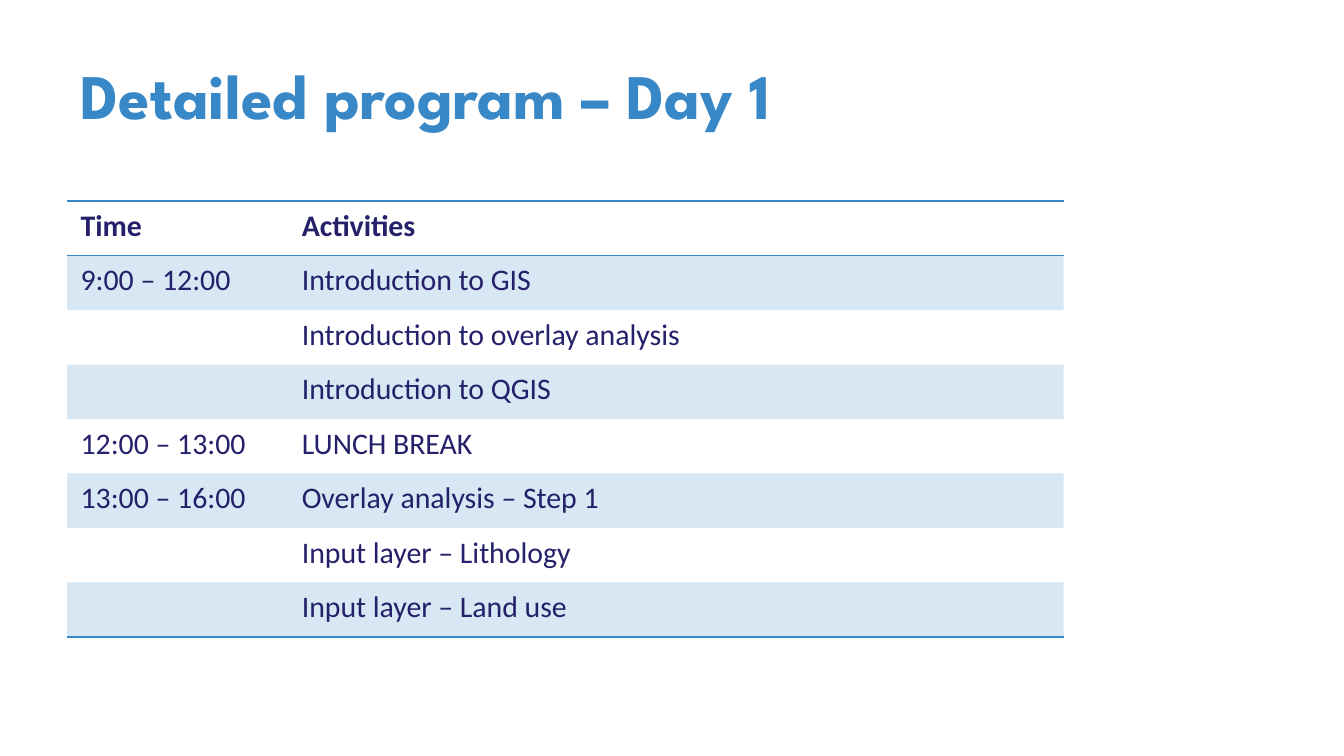
from lxml.etree import SubElement
from pptx import Presentation
from pptx.dml.color import RGBColor
from pptx.enum.text import MSO_ANCHOR, PP_ALIGN
from pptx.oxml.ns import qn
from pptx.util import Cm, Pt

BLUE = "3887C7"
NAVY = "242069"
NO_STYLE = "{2D5ABB26-0587-4C30-8999-92F81FD0307C}"

PROGRAM = [
    ("Time", "Activities"),
    ("9:00 – 12:00", "Introduction to GIS"),
    ("", "Introduction to overlay analysis"),
    ("", "Introduction to QGIS"),
    ("12:00 – 13:00", "LUNCH BREAK"),
    ("13:00 – 16:00", "Overlay analysis – Step 1"),
    ("", "Input layer – Lithology"),
    ("", "Input layer – Land use"),
]


def color(hex_string):
    return RGBColor.from_string(hex_string)


def write_text(text_frame, text, *, font, size, hex_color, bold=False,
               anchor=MSO_ANCHOR.TOP):
    text_frame.word_wrap = True
    text_frame.vertical_anchor = anchor
    paragraph = text_frame.paragraphs[0]
    paragraph.alignment = PP_ALIGN.LEFT
    paragraph.font.size = Pt(size)
    if text:
        run = paragraph.add_run()
        run.text = text
        run.font.name = font
        run.font.size = Pt(size)
        run.font.bold = bold
        run.font.color.rgb = color(hex_color)


def add_border(cell, side, hex_color, points):
    line = SubElement(cell._tc.get_or_add_tcPr(), qn(f"a:ln{side}"),
                      w=str(Pt(points)))
    fill = SubElement(line, qn("a:solidFill"))
    SubElement(fill, qn("a:srgbClr"), val=hex_color)


def fill_cell(cell, hex_color, opacity):
    cell.fill.solid()
    cell.fill.fore_color.rgb = color(hex_color)
    rgb = cell._tc.tcPr.find(f"{qn('a:solidFill')}/{qn('a:srgbClr')}")
    SubElement(rgb, qn("a:alpha"), val=str(opacity * 1000))


def place_title(slide, text, left, top, width, height):
    title = slide.shapes.title
    title.left, title.top = Cm(left), Cm(top)
    title.width, title.height = Cm(width), Cm(height)
    write_text(title.text_frame, text, font="League Spartan", size=34,
               hex_color=BLUE, bold=True, anchor=MSO_ANCHOR.MIDDLE)


def place_program(slide, rows, left, top, width, height, time_width):
    frame = slide.shapes.add_table(len(rows), 2, Cm(left), Cm(top),
                                   Cm(width), Cm(height))
    table = frame.table
    table.horz_banding = False
    table._tbl.tblPr.find(qn("a:tableStyleId")).text = NO_STYLE
    table.columns[0].width = Cm(time_width)
    table.columns[1].width = Cm(width - time_width)

    for row_index, row in enumerate(rows):
        is_header = row_index == 0
        is_last = row_index == len(rows) - 1
        for column_index, text in enumerate(row):
            cell = table.cell(row_index, column_index)
            # Rules above and below the header, and below the last row
            if is_header:
                add_border(cell, "T", BLUE, 1)
            if is_header or is_last:
                add_border(cell, "B", BLUE, 1)
            # Every other row is tinted
            if row_index % 2:
                fill_cell(cell, BLUE, opacity=20)
            else:
                cell.fill.background()
            cell.vertical_anchor = MSO_ANCHOR.TOP
            write_text(cell.text_frame, text, font="Calibri", size=16,
                       hex_color=NAVY, bold=is_header)


def main():
    presentation = Presentation()
    presentation.slide_width, presentation.slide_height = Cm(25.4), Cm(14.29)
    slide = presentation.slides.add_slide(presentation.slide_layouts[5])
    place_title(slide, "Detailed program – Day 1", 1.27, 0.58, 18.83, 2.39)
    place_program(slide, PROGRAM, 1.27, 3.8, 18.83, 8.24, time_width=4.18)
    presentation.save("out.pptx")


if __name__ == "__main__":
    main()
